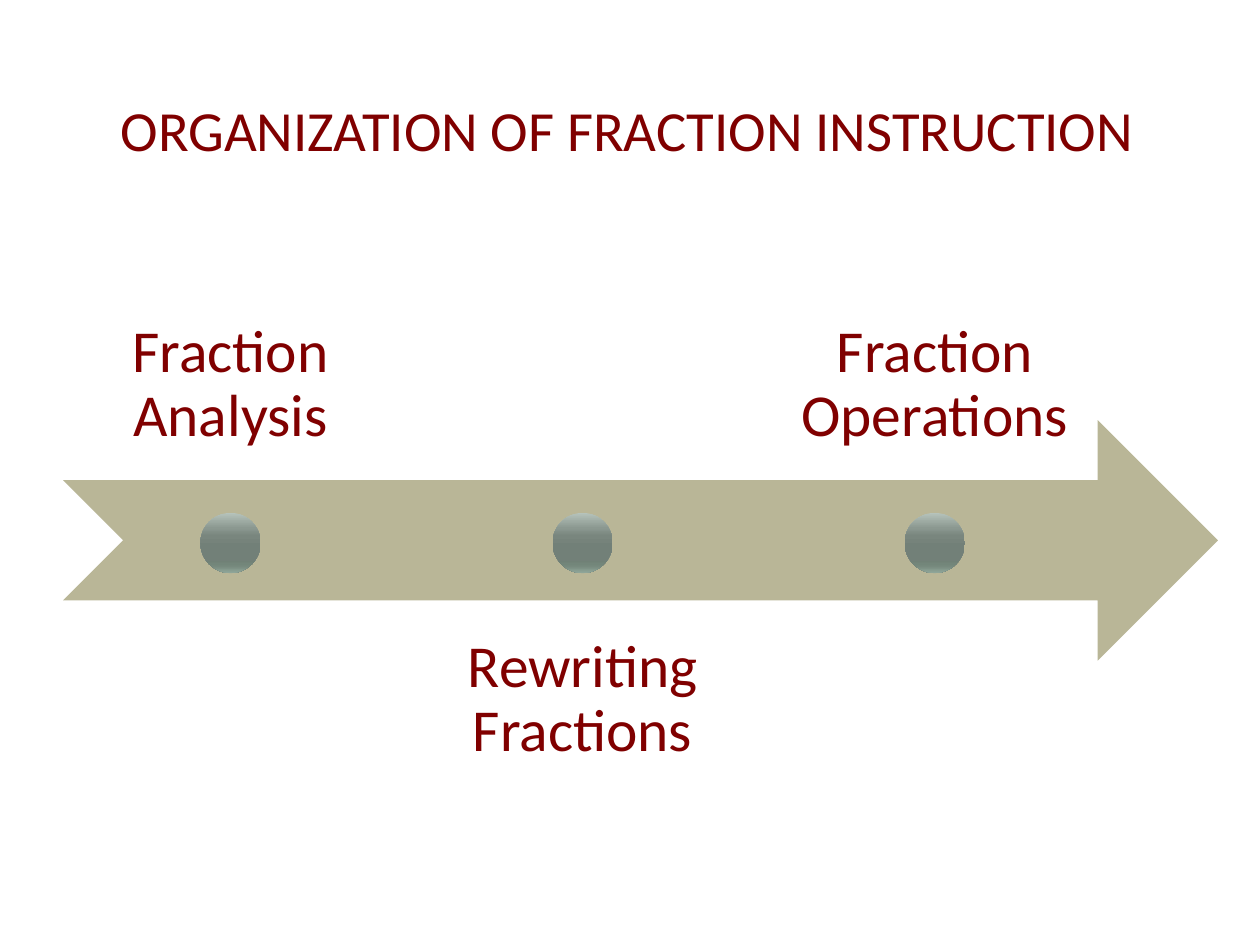
from dataclasses import dataclass

from lxml import etree
from pptx import Presentation
from pptx.dml.color import RGBColor
from pptx.enum.shapes import MSO_SHAPE
from pptx.enum.text import MSO_ANCHOR, PP_ALIGN
from pptx.oxml.ns import qn
from pptx.util import Pt

ARROW = MSO_SHAPE.NOTCHED_RIGHT_ARROW
OVAL = MSO_SHAPE.OVAL
TOP, MIDDLE, BOTTOM = MSO_ANCHOR.TOP, MSO_ANCHOR.MIDDLE, MSO_ANCHOR.BOTTOM
CENTER = PP_ALIGN.CENTER


@dataclass(frozen=True)
class Theme:
    font: str = "Calibri"
    text: str = "800000"
    arrow: str = "B9B697"
    background: str = "FFFFFF"
    title_size: float = 32.4
    label_size: float = 34
    # Position in percent and colour, from top to bottom
    marker_stops: tuple = (
        (0, "B6C3BB"), (25, "8B9890"), (38, "79867E"), (55, "728078"),
        (80, "708176"), (88, "75887C"), (100, "91A79A"),
    )


class TimelineSlide:
    def __init__(self, slide, theme):
        self.slide = slide
        self.theme = theme
        background = slide.background.fill
        background.solid()
        background.fore_color.rgb = RGBColor.from_string(theme.background)

    def text(self, wording, box, size, anchor, inset, line_spacing=1.0):
        frame = self.slide.shapes.add_textbox(*map(Pt, box)).text_frame
        frame.word_wrap = True
        frame.vertical_anchor = anchor
        frame.margin_left = frame.margin_right = Pt(inset)
        frame.margin_top = frame.margin_bottom = Pt(inset)
        paragraph = frame.paragraphs[0]
        paragraph.alignment = CENTER
        paragraph.line_spacing = line_spacing
        run = paragraph.add_run()
        run.text = wording
        run.font.name = self.theme.font
        run.font.size = Pt(size)
        run.font.color.rgb = RGBColor.from_string(self.theme.text)

    def plain_shape(self, preset, box):
        shape = self.slide.shapes.add_shape(preset, *map(Pt, box))
        shape.shadow.inherit = False
        shape.line.fill.background()
        return shape

    def arrow(self, box):
        fill = self.plain_shape(ARROW, box).fill
        fill.solid()
        fill.fore_color.rgb = RGBColor.from_string(self.theme.arrow)

    def marker(self, center_x, center_y, size):
        box = (center_x - size / 2, center_y - size / 2, size, size)
        marker = self.plain_shape(OVAL, box)
        marker.fill.gradient()
        marker.fill.gradient_angle = 270
        stops = marker.element.spPr.find(qn("a:gradFill")).find(qn("a:gsLst"))
        for stop in list(stops):
            stops.remove(stop)
        for percent, color in self.theme.marker_stops:
            stop = etree.SubElement(stops, qn("a:gs"), pos=str(percent * 1000))
            etree.SubElement(stop, qn("a:srgbClr"), val=color)


def main():
    presentation = Presentation()
    presentation.slide_width, presentation.slide_height = Pt(720), Pt(540)
    theme = Theme()
    page = TimelineSlide(
        presentation.slides.add_slide(presentation.slide_layouts[6]), theme)

    page.text("ORGANIZATION OF FRACTION INSTRUCTION", (33.5, 32.4, 650, 82),
              theme.title_size, MIDDLE, inset=4)

    left, arrow_top, band_height = 36, 240, 137.5
    page.arrow((left, arrow_top, 660, band_height))

    label_width, stage_step = 191.5, 201.2
    above, below = 138.2, 344.9
    stages = (
        ("Fraction Analysis", above, BOTTOM),
        ("Rewriting Fractions", below, TOP),
        ("Fraction Operations", above, BOTTOM),
    )
    for index, (stage, label_top, anchor) in enumerate(stages):
        label_left = left + index * stage_step
        page.text(stage, (label_left, label_top, label_width, band_height),
                  theme.label_size, anchor, inset=18.7, line_spacing=0.9)
        page.marker(label_left + label_width / 2, 310.3, size=34.4)

    presentation.save("out.pptx")


if __name__ == "__main__":
    main()
